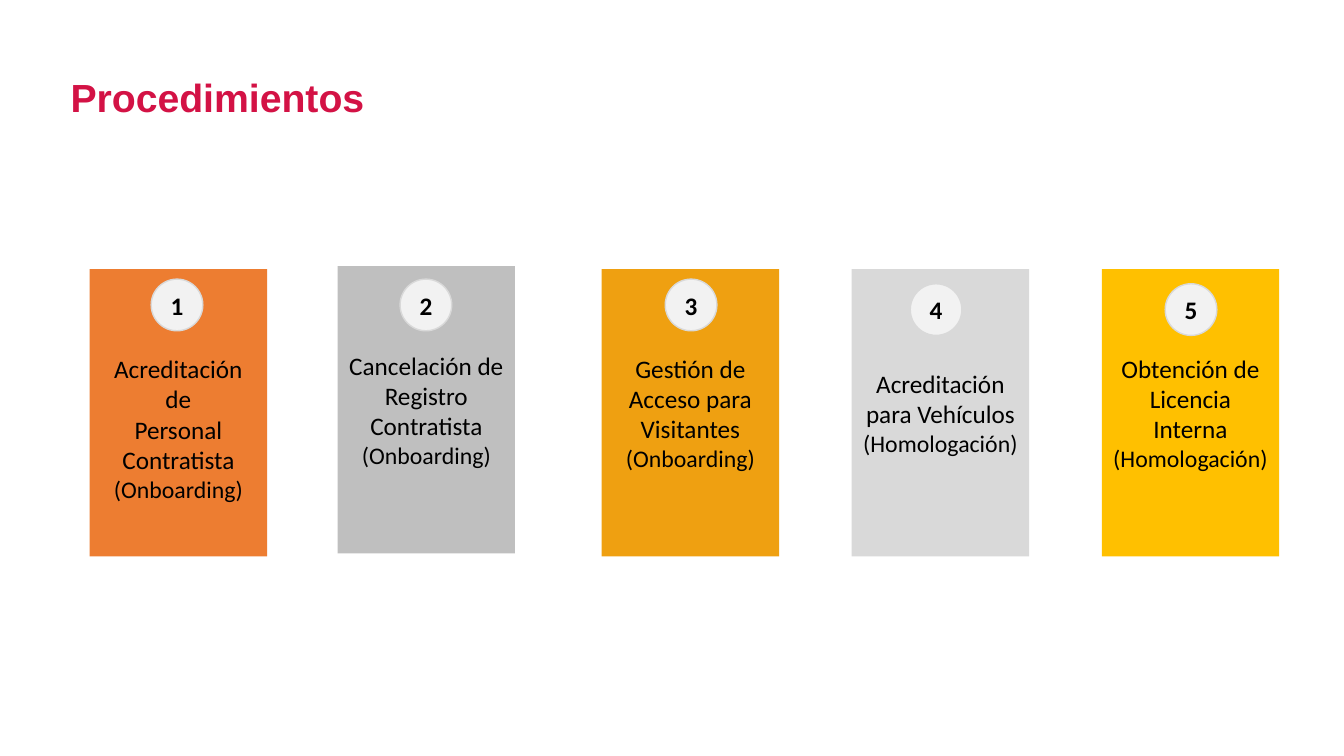
from pptx import Presentation
from pptx.util import Pt
from pptx.dml.color import RGBColor
from pptx.enum.shapes import MSO_SHAPE as Preset
from pptx.enum.text import MSO_ANCHOR as Anchor, PP_ALIGN as Align

TITLE = "Procedimientos"
CARDS = [
    {"left": 64.1, "top": 192.2, "fill": "ED7D31", "badge": (108, 199.4), "head": 25.6,
     "lines": ["Acreditación de", "Personal", "Contratista"], "stage": "(Onboarding)"},
    {"left": 241.2, "top": 190.1, "fill": "BFBFBF", "badge": (285.8, 199.4), "head": 3.6,
     "lines": ["Cancelación de", "Registro", "Contratista"], "stage": "(Onboarding)"},
    {"left": 429.8, "top": 192.2, "fill": "EFA011", "badge": (475.2, 199.4), "head": 3.6,
     "lines": ["Gestión de", "Acceso para", "Visitantes"], "stage": "(Onboarding)"},
    {"left": 608.4, "top": 192.2, "fill": "D9D9D9", "badge": (650.2, 202.7), "head": 3.6,
     "lines": ["Acreditación para Vehículos"], "stage": "(Homologación)"},
    {"left": 787, "top": 192.2, "fill": "FFC000", "badge": (832.3, 202.7), "head": 3.6,
     "lines": ["Obtención de Licencia", "Interna"], "stage": "(Homologación)"},
]
CARD_WIDTH, CARD_HEIGHT, BADGE_SIZE = 126.7, 205.2, 36.9


def color(code):
    return RGBColor.from_string(code)


def write(box, lines, font="Calibri", ink="000000", bold=False, align=Align.CENTER, spacing=None):
    frame = box.text_frame
    frame.word_wrap = True
    frame.vertical_anchor = Anchor.MIDDLE
    for index, (text, size) in enumerate(lines):
        para = frame.add_paragraph() if index else frame.paragraphs[0]
        para.alignment = align
        para.line_spacing = spacing
        span = para.add_run()
        span.text = text
        span.font.name = font
        span.font.size = Pt(size)
        span.font.bold = bold
        span.font.color.rgb = color(ink)


def add_box(page, preset, left, top, width, height, fill, line=None):
    box = page.shapes.add_shape(preset, Pt(left), Pt(top), Pt(width), Pt(height))
    box.shadow.inherit = False
    box.fill.solid()
    box.fill.fore_color.rgb = color(fill)
    if line:
        box.line.color.rgb = color(line)
        box.line.width = Pt(1)
    else:
        box.line.fill.background()
    return box


def main():
    deck = Presentation()
    deck.slide_width, deck.slide_height = Pt(960), Pt(540)
    page = deck.slides.add_slide(deck.slide_layouts[5])

    title = page.shapes.title
    title.left, title.top, title.width, title.height = Pt(43.2), Pt(19.4), Pt(673.9), Pt(104.4)
    write(title, [(TITLE, 28)], font="Arial", ink="D31245", bold=True, align=Align.LEFT, spacing=0.9)

    for number, card in enumerate(CARDS, 1):
        box = add_box(page, Preset.RECTANGLE, card["left"], card["top"],
                      CARD_WIDTH, CARD_HEIGHT, card["fill"])
        box.text_frame.margin_top = Pt(card["head"])
        write(box, [(line, 18) for line in card["lines"]] + [(card["stage"], 17)])
        badge = add_box(page, Preset.OVAL, *card["badge"], BADGE_SIZE, BADGE_SIZE, "F2F2F2", "D9D9D9")
        write(badge, [(str(number), 18)], bold=True)

    deck.save("out.pptx")


if __name__ == "__main__":
    main()
